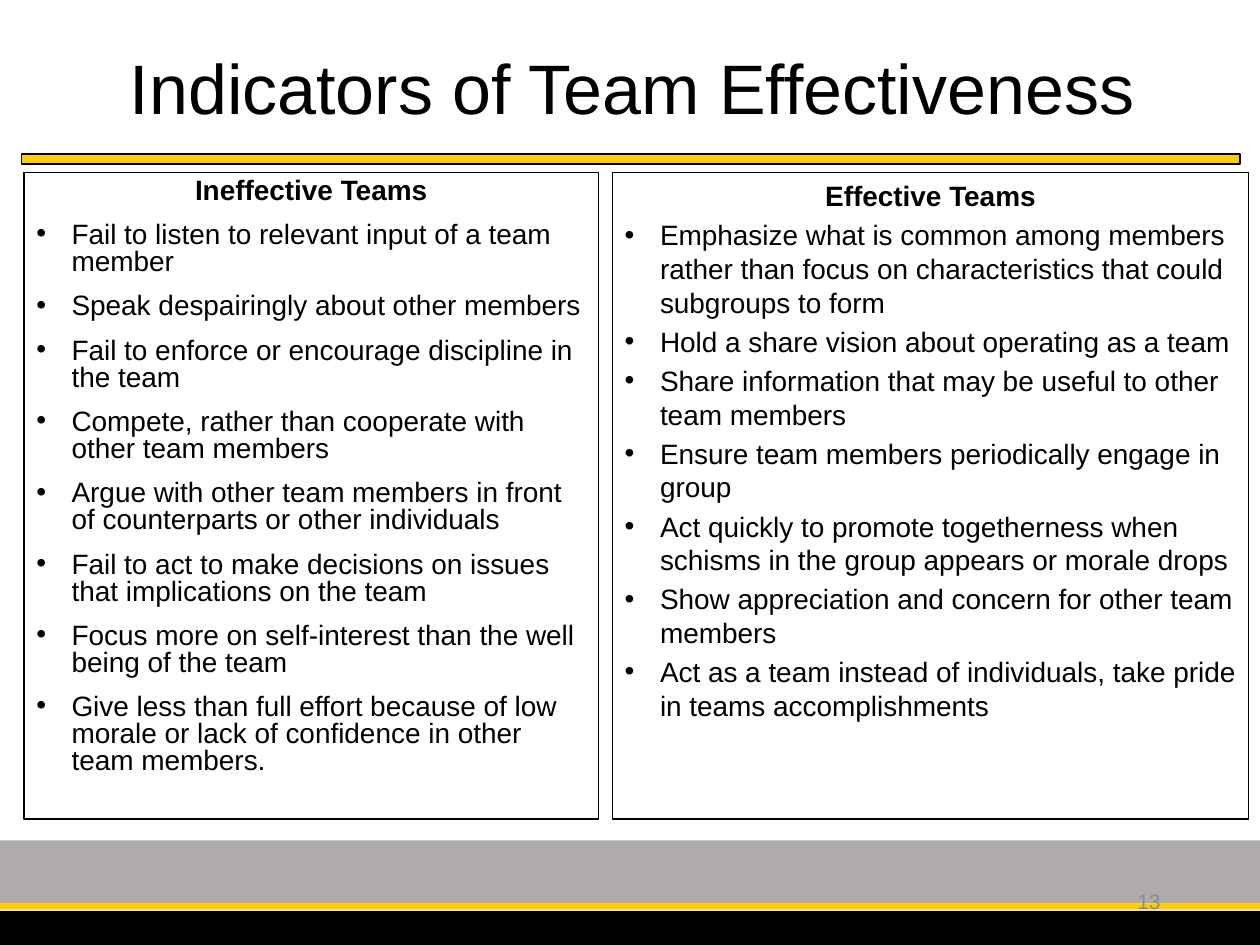
from dataclasses import dataclass

from lxml import etree
from pptx import Presentation
from pptx.dml.color import RGBColor
from pptx.enum.shapes import MSO_SHAPE
from pptx.enum.text import MSO_ANCHOR, PP_ALIGN
from pptx.oxml.ns import qn
from pptx.util import Inches, Pt

RECT = MSO_SHAPE.RECTANGLE
TOP, MIDDLE = MSO_ANCHOR.TOP, MSO_ANCHOR.MIDDLE
LEFT, CENTER, RIGHT = PP_ALIGN.LEFT, PP_ALIGN.CENTER, PP_ALIGN.RIGHT


@dataclass(frozen=True)
class Theme:
    font: str = "Arial"
    black: str = "000000"
    gold: str = "FFCC00"
    gray: str = "AFABAB"
    number: str = "8C8C8C"
    title_size: int = 40
    body_size: int = 16
    number_size: int = 12


THEME = Theme()

INEFFECTIVE = [
    "Fail to listen to relevant input of a team member",
    "Speak despairingly about other members",
    "Fail to enforce or encourage discipline in the team",
    "Compete, rather than cooperate with other team members",
    "Argue with other team members in front of counterparts or other individuals",
    "Fail to act to make decisions on issues that implications on the team",
    "Focus more on self-interest than the well being of the team",
    "Give less than full effort because of low morale or lack of confidence in other team members.",
]
EFFECTIVE = [
    "Emphasize what is common among members rather than focus on characteristics that could subgroups to form",
    "Hold a share vision about operating as a team",
    "Share information that may be useful to other team members",
    "Ensure team members periodically engage in group",
    "Act quickly to promote togetherness when schisms in the group appears or morale drops",
    "Show appreciation and concern for other team members",
    "Act as a team instead of individuals, take pride in teams accomplishments",
]


def add_rect(s, box, fill=None, line_width=None):
    sp = s.shapes.add_shape(RECT, *map(Inches, box))
    sp.shadow.inherit = False
    if fill:
        sp.fill.solid()
        sp.fill.fore_color.rgb = RGBColor.from_string(fill)
    else:
        sp.fill.background()
    if line_width:
        sp.line.color.rgb = RGBColor.from_string(THEME.black)
        sp.line.width = Pt(line_width)
    else:
        sp.line.fill.background()
    return sp


def add_bullet(p):
    pPr = p._p.get_or_add_pPr()
    pPr.set("marL", str(Inches(0.28)))
    pPr.set("indent", str(-Inches(0.28)))
    etree.SubElement(pPr, qn("a:buFont")).set("typeface", THEME.font)
    etree.SubElement(pPr, qn("a:buChar")).set("char", "•")


def write(p, text, size, color=THEME.black, bold=False, **paragraph_format):
    for name, value in paragraph_format.items():
        setattr(p, name, value)
    r = p.add_run()
    r.text = text
    font_format = {"name": THEME.font, "size": Pt(size), "bold": bold}
    for name, value in font_format.items():
        setattr(r.font, name, value)
    r.font.color.rgb = RGBColor.from_string(color)


def add_label(s, box, text, size, color, **paragraph_format):
    tf = s.shapes.add_textbox(*map(Inches, box)).text_frame
    tf.word_wrap = True
    tf.vertical_anchor = MIDDLE
    write(tf.paragraphs[0], text, size, color, **paragraph_format)


def add_panel(s, box, heading, items, space, line_spacing):
    tf = add_rect(s, box, line_width=0.75).text_frame
    tf.word_wrap = True
    tf.vertical_anchor = TOP
    write(tf.paragraphs[0], heading, THEME.body_size, bold=True,
          alignment=CENTER, line_spacing=line_spacing)
    for item in items:
        p = tf.add_paragraph()
        add_bullet(p)
        write(p, item, THEME.body_size, alignment=LEFT,
              line_spacing=line_spacing, space_before=Pt(space))


def main():
    prs = Presentation()
    prs.slide_width, prs.slide_height = Inches(10), Inches(7.5)
    s = prs.slides.add_slide(prs.slide_layouts[6])

    # Footer bands and the rule under the title
    for top, height, color in ((6.67, 0.5, THEME.gray),
                               (7.17, 0.05, THEME.gold),
                               (7.23, 0.27, THEME.black)):
        add_rect(s, (0, top, 10, height), color)
    add_rect(s, (0.17, 1.22, 9.67, 0.08), THEME.gold, line_width=1)

    # Title and slide number
    add_label(s, (0.42, 0.18, 9.19, 1.09), "Indicators of Team Effectiveness",
              THEME.title_size, THEME.black, alignment=CENTER, line_spacing=0.9)
    add_label(s, (7.06, 6.95, 2.25, 0.4), "13",
              THEME.number_size, THEME.number, alignment=RIGHT)

    # Two panels side by side
    add_panel(s, (0.19, 1.37, 4.56, 5.13), "Ineffective Teams", INEFFECTIVE,
              space=10, line_spacing=0.8)
    add_panel(s, (4.86, 1.37, 5.05, 5.13), "Effective Teams", EFFECTIVE,
              space=0.2 * THEME.body_size, line_spacing=1.0)

    prs.save("out.pptx")


if __name__ == "__main__":
    main()
